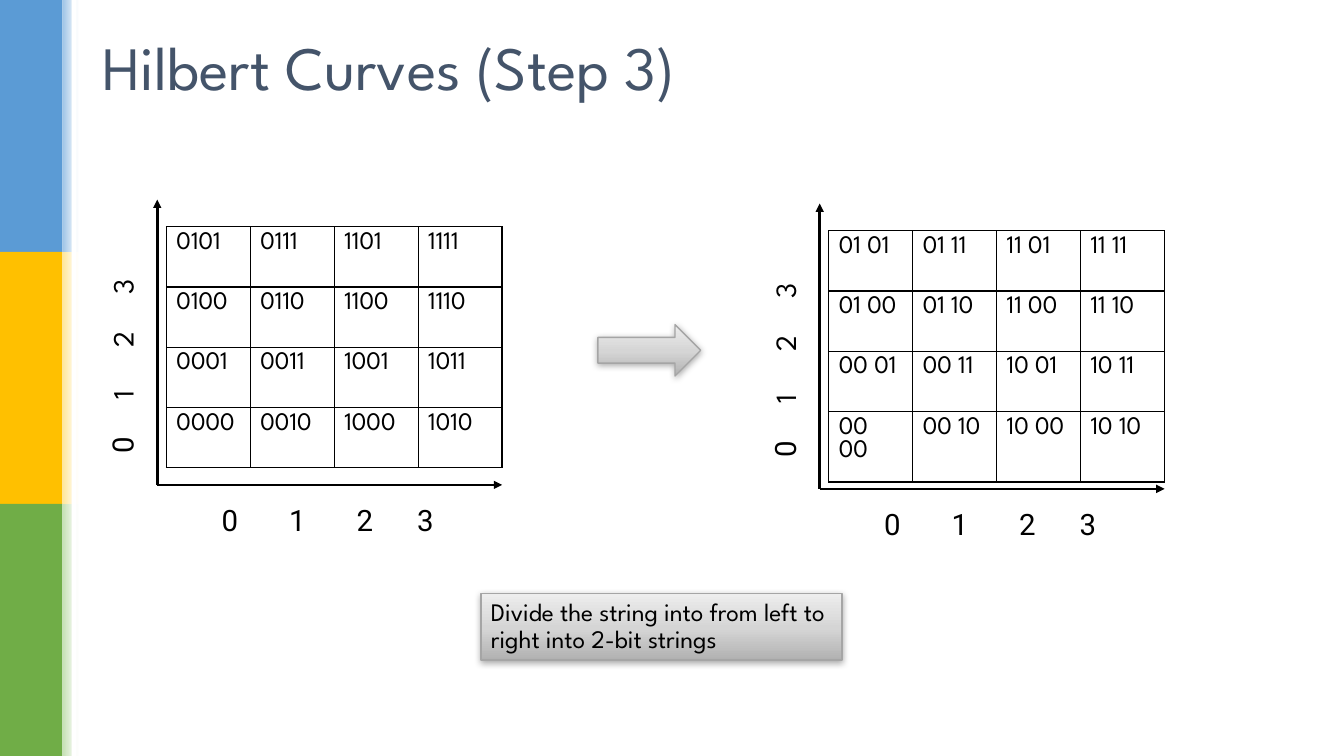
from dataclasses import dataclass

from lxml import etree
from pptx import Presentation
from pptx.dml.color import RGBColor
from pptx.enum.shapes import MSO_CONNECTOR, MSO_SHAPE
from pptx.enum.text import MSO_ANCHOR
from pptx.oxml.ns import qn
from pptx.util import Inches, Pt

RECT, ARROW = MSO_SHAPE.RECTANGLE, MSO_SHAPE.RIGHT_ARROW
STRAIGHT = MSO_CONNECTOR.STRAIGHT
MIDDLE, TOP = MSO_ANCHOR.MIDDLE, MSO_ANCHOR.TOP


@dataclass(frozen=True)
class Theme:
    heading: str = "League Spartan"
    digits: str = "Roboto"
    title: str = "44546A"
    ink: str = "000000"
    paper: str = "FFFFFF"
    edge: str = "A5A5A5"
    bands: tuple = (("5B9BD5", "9DC3E6"), ("FFC000", "FFE699"), ("70AD47", "C5E0B4"))
    metal: tuple = ((0, "B1B1B1"), (48, "D5D5D5"), (100, "EDEDED"))
    title_size: int = 44
    body_size: int = 18
    axis_size: int = 21


T = Theme()
CODES = (
    ("0101", "0111", "1101", "1111"),
    ("0100", "0110", "1100", "1110"),
    ("0001", "0011", "1001", "1011"),
    ("0000", "0010", "1000", "1010"),
)


def rgb(value):
    return RGBColor.from_string(value)


def element(parent, tag, **attrs):
    return etree.SubElement(parent, qn(tag), {k: str(v) for k, v in attrs.items()})


def add_run(p, text, size, font=T.heading, color=T.ink):
    r = p.add_run()
    r.text = text
    for name, value in {"size": Pt(size), "name": font}.items():
        setattr(r.font, name, value)
    r.font.color.rgb = rgb(color)


def set_frame(tf, anchor=TOP, left=0.1):
    values = {"word_wrap": True, "vertical_anchor": anchor, "margin_left": Inches(left)}
    for name, value in values.items():
        setattr(tf, name, value)
    return tf.paragraphs[0]


def add_block(s, kind, left, top, width, height, fill=None):
    sp = s.shapes.add_shape(kind, Inches(left), Inches(top), Inches(width), Inches(height))
    sp.shadow.inherit = False
    sp.line.fill.background()
    if fill:
        sp.fill.solid()
        sp.fill.fore_color.rgb = rgb(fill)
    return sp


def set_gradient(sp, stops, angle):
    sp.fill.gradient()
    sp.fill.gradient_angle = angle
    gs_list = sp.element.spPr.find(".//" + qn("a:gsLst"))
    for gs in list(gs_list):
        gs_list.remove(gs)
    for position, color in stops:
        gs = element(gs_list, "a:gs", pos=position * 1000)
        element(gs, "a:srgbClr", val=color)


def add_metal(s, kind, left, top, width, height):
    sp = add_block(s, kind, left, top, width, height)
    set_gradient(sp, T.metal, 90)
    sp.line.color.rgb = rgb(T.edge)
    sp.line.width = Pt(1)
    effects = sp.element.spPr.find(qn("a:effectLst"))
    shadow = element(effects, "a:outerShdw", blurRad=Pt(5), dist=Pt(1),
                     dir=5400000, algn="ctr", rotWithShape=0)
    color = element(shadow, "a:srgbClr", val=T.ink)
    element(color, "a:alpha", val=32000)
    return sp


def add_sidebar(s):
    for i, (solid, pale) in enumerate(T.bands):
        add_block(s, RECT, 0, i * 2.5, 0.62, 2.5, solid)
        fade = add_block(s, RECT, 0.62, i * 2.5, 0.16, 2.5)
        set_gradient(fade, ((0, pale), (100, T.paper)), 0)
    add_block(s, RECT, 0.71, 0, 0.05, 7.5, T.paper)


def add_title(s, text):
    box = s.shapes.add_textbox(Inches(0.92), Inches(0.15), Inches(11.5), Inches(1.1))
    p = set_frame(box.text_frame, MIDDLE)
    p.line_spacing = 0.9
    add_run(p, text, T.title_size, color=T.title)


def set_borders(cell):
    tc_pr = cell._tc.get_or_add_tcPr()
    for side in ("a:lnL", "a:lnR", "a:lnT", "a:lnB"):
        ln = element(tc_pr, side, w=Pt(1))
        fill = element(ln, "a:solidFill")
        element(fill, "a:srgbClr", val=T.ink)


def add_grid(s, left, top, rows):
    frame = s.shapes.add_table(4, 4, Inches(left), Inches(top), Inches(3.33), Inches(2.39))
    table = frame.table
    table.first_row = table.horz_banding = False
    for column in table.columns:
        column.width = Inches(3.33 / 4)
    for row, codes in zip(table.rows, rows):
        row.height = Inches(2.39 / 4)
        for cell, code in zip(row.cells, codes):
            set_borders(cell)
            cell.fill.solid()
            cell.fill.fore_color.rgb = rgb(T.paper)
            add_run(cell.text_frame.paragraphs[0], code, T.body_size)


def add_axis(s, x1, y1, x2, y2):
    line = s.shapes.add_connector(STRAIGHT, Inches(x1), Inches(y1), Inches(x2), Inches(y2))
    line.line.color.rgb = rgb(T.ink)
    line.line.width = Pt(1.75)
    element(line.line._get_or_add_ln(), "a:tailEnd", type="triangle")
    element(line._element.spPr, "a:effectLst")


def add_ticks(s, left, top, tabs, font, inset=0.1, rotation=0):
    sp = add_block(s, RECT, left, top, 2.67, 0.5, T.paper)
    sp.rotation = rotation
    p = set_frame(sp.text_frame, left=inset)
    p_pr = p._p.get_or_add_pPr()
    p_pr.set("algn", "l")
    tab_list = element(p_pr, "a:tabLst")
    for tab in tabs:
        element(tab_list, "a:tab", pos=Inches(tab), algn="l")
    add_run(p, "0", T.axis_size, T.digits)
    add_run(p, "\t1\t2\t3", T.axis_size, font)


def add_plot(s, x, y, rows):
    add_grid(s, x + 0.09, y - 2.56, rows)
    add_axis(s, x, y, x + 3.42, y)
    add_axis(s, x, y, x, y - 2.83)
    add_ticks(s, x + 0.54, y + 0.12, (0.67, 1.34, 1.94), T.digits)
    add_ticks(s, x - 1.66, y - 1.58, (0.53, 1.05, 1.57), T.heading, 0.32, 270)


def add_callout(s, text):
    sp = add_metal(s, RECT, 4.77, 5.89, 3.58, 0.66)
    p = set_frame(sp.text_frame, MIDDLE)
    p._p.get_or_add_pPr().set("algn", "l")
    p.line_spacing = 0.9
    add_run(p, text, T.body_size)


def main():
    prs = Presentation()
    prs.slide_width, prs.slide_height = Inches(13.33), Inches(7.5)
    s = prs.slides.add_slide(prs.slide_layouts[6])
    add_sidebar(s)
    add_title(s, "Hilbert Curves (Step 3)")
    split_codes = [[f"{code[:2]} {code[2:]}" for code in row] for row in CODES]
    add_plot(s, 8.13, 4.85, split_codes)
    add_callout(s, "Divide the string into from left to right into 2-bit strings")
    add_plot(s, 1.56, 4.81, CODES)
    add_metal(s, ARROW, 5.93, 3.22, 1.02, 0.51)
    prs.save("out.pptx")


if __name__ == "__main__":
    main()
